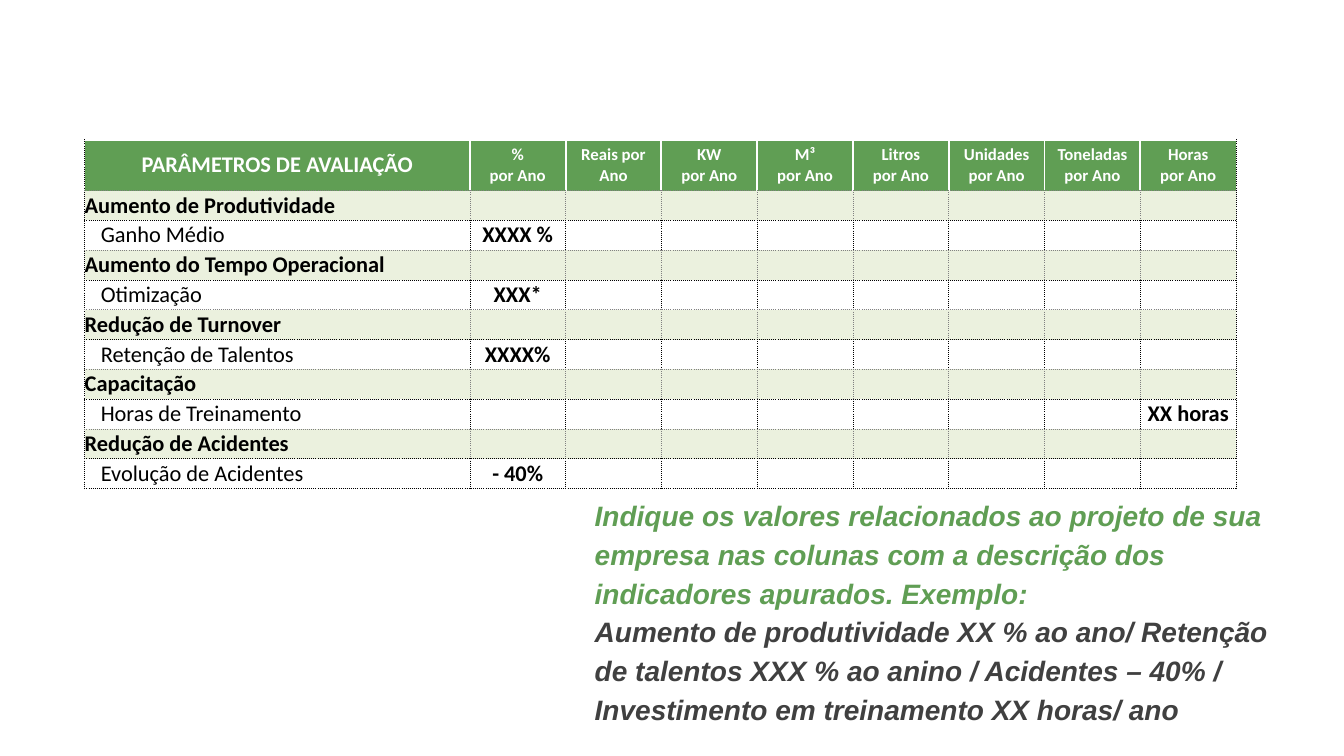
import pptx
import pptx.util
import pptx.dml.color
import pptx.enum.text
import pptx.oxml.ns
import lxml.etree

Inches = pptx.util.Inches
Pt = pptx.util.Pt
ALIGN = pptx.enum.text.PP_ALIGN


def color(code):
    return pptx.dml.color.RGBColor.from_string(code)


def edge(cell, side, code, width, dash):
    tag = pptx.oxml.ns.qn
    line = lxml.etree.SubElement(cell._tc.get_or_add_tcPr(), tag("a:ln" + side), w=str(Pt(width)))
    fill = lxml.etree.SubElement(line, tag("a:solidFill"))
    lxml.etree.SubElement(fill, tag("a:srgbClr"), val=code)
    lxml.etree.SubElement(line, tag("a:prstDash"), val=dash)


white = ("FFFFFF", 1.5, "solid")
black = ("000000", 0.5, "sysDot")
gray = ("808080", 0.5, "sysDot")

deck = pptx.Presentation()
deck.slide_width = Inches(13.33)
deck.slide_height = Inches(7.5)
slide = deck.slides.add_slide(deck.slide_layouts[6])

heads = ["PARÂMETROS DE AVALIAÇÃO", "%\vpor Ano", "Reais por\vAno", "KW\vpor Ano", "M³\vpor Ano",
         "Litros\vpor Ano", "Unidades\vpor Ano", "Toneladas\vpor Ano", "Horas\vpor Ano"]
groups = [
    ("Aumento de Produtividade", "Ganho Médio", 1, "XXXX %"),
    ("Aumento do Tempo Operacional", "Otimização", 1, "XXX*"),
    ("Redução de Turnover", "Retenção de Talentos", 1, "XXXX%"),
    ("Capacitação", "Horas de Treinamento", 8, "XX horas"),
    ("Redução de Acidentes", "Evolução de Acidentes", 1, "- 40%"),
]
rows = [heads]
for title, item, spot, value in groups:
    rows.append([title] + [""] * 8)
    rows.append([item] + [value if col == spot else "" for col in range(1, 9)])

last = len(rows) - 1
end = len(heads) - 1
frame = slide.shapes.add_table(len(rows), len(heads), Inches(0.84), Inches(1.39), Inches(11.42), Inches(3.46))
table = frame.table
for col in range(len(heads)):
    table.columns[col].width = Inches(3.82 if col == 0 else 0.95)
for row in range(len(rows)):
    table.rows[row].height = Inches(0.5 if row == 0 else (3.46 - 0.5) / last)

for row, texts in enumerate(rows):
    head = row == 0
    band = row % 2 == 1
    for col, text in enumerate(texts):
        cell = table.cell(row, col)
        inner = white if head else gray if band else black
        edge(cell, "L", *(black if col == 0 else inner))
        edge(cell, "R", *(black if col == end else inner))
        edge(cell, "T", *(white if head else gray if band else black))
        edge(cell, "B", *(black if band or row == last else gray))
        cell.fill.solid()
        cell.fill.fore_color.rgb = color("609E54" if head else "EBF1DE" if band else "FFFFFF")
        cell.margin_left = Inches(0 if head or band or col else 0.16)
        cell.margin_right = cell.margin_top = cell.margin_bottom = 0
        cell.vertical_anchor = pptx.enum.text.MSO_ANCHOR.MIDDLE
        cell.text = text
        para = cell.text_frame.paragraphs[0]
        para.alignment = ALIGN.CENTER if head or col else ALIGN.LEFT
        font = para.font
        font.name = "Calibri"
        font.size = Pt(12 if head and col else 16)
        font.bold = bool(head or band or col)
        font.color.rgb = color("FFFFFF" if head else "000000")

note = slide.shapes.add_textbox(Inches(5.8), Inches(4.85), Inches(7.09), Inches(2.42))
note.text_frame.word_wrap = True
para = note.text_frame.paragraphs[0]
para.line_spacing = 1.15
para.space_after = Pt(4)
para.font.name = "Arial"
para.font.size = Pt(20)
para.font.bold = True
para.font.italic = True
guide = para.add_run()
guide.text = ("Indique os valores relacionados ao projeto de sua empresa nas colunas "
              "com a descrição dos indicadores apurados. Exemplo:")
guide.font.color.rgb = color("609E54")
para.add_line_break()
sample = para.add_run()
sample.text = ("Aumento de produtividade XX % ao ano/ Retenção de talentos XXX % ao anino / "
               "Acidentes – 40% / Investimento em treinamento XX horas/ ano")
sample.font.color.rgb = color("404040")

deck.save("out.pptx")
